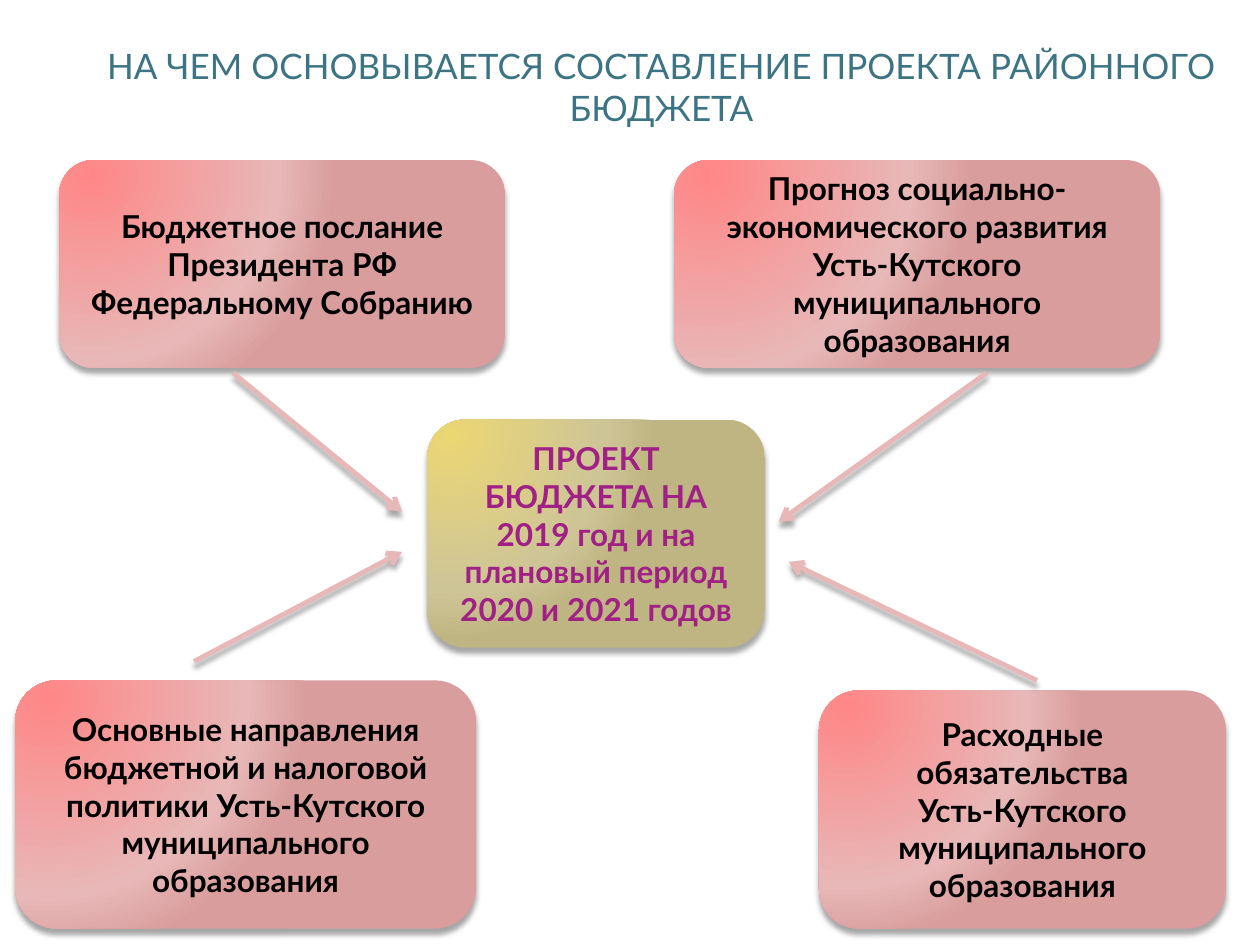
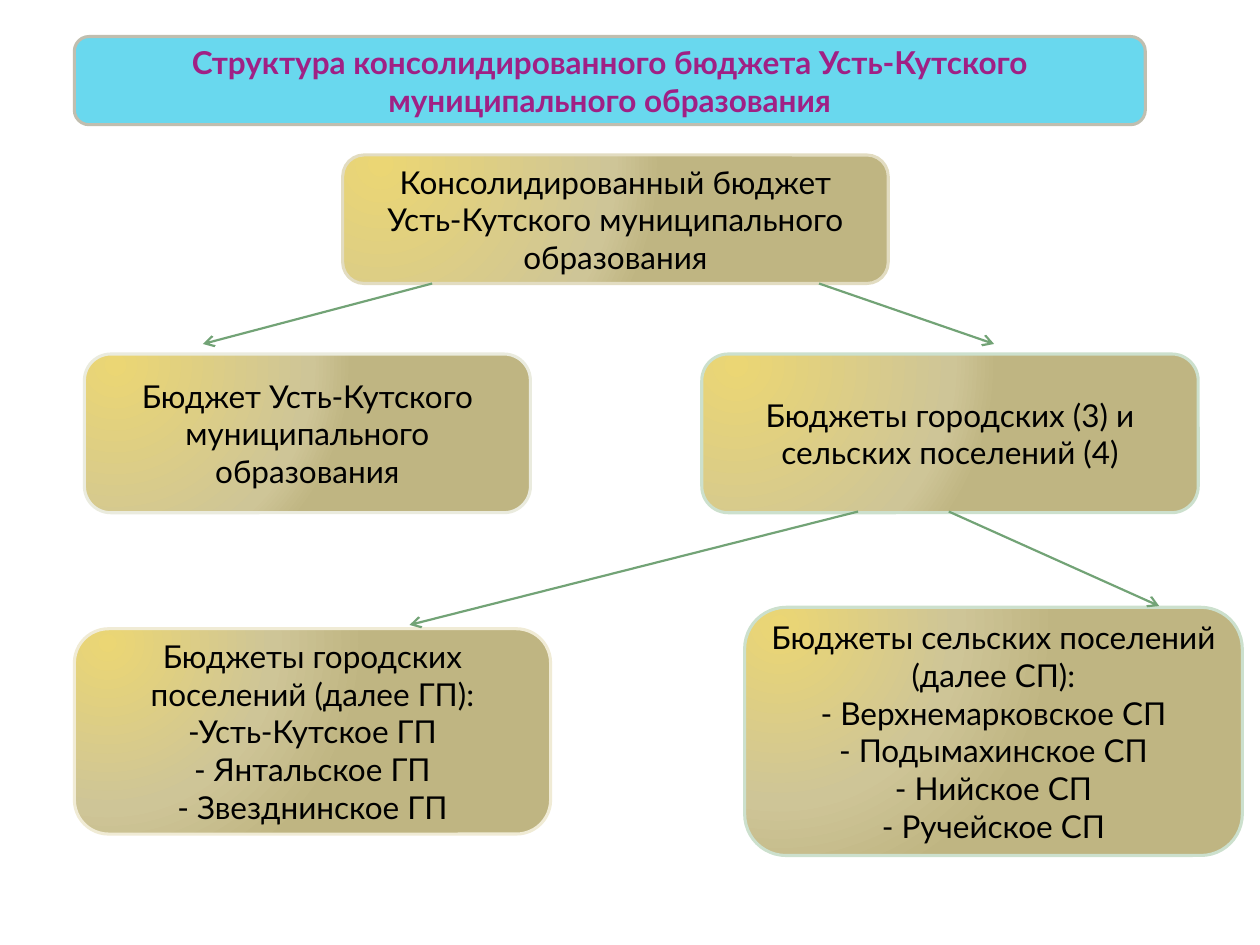
"""Builds two slides on how the district budget is drafted and structured."""
from lxml.etree import SubElement
from pptx import Presentation
from pptx.dml.color import RGBColor as RGB
from pptx.enum.shapes import MSO_CONNECTOR as CONN, MSO_SHAPE as SHAPE
from pptx.enum.text import MSO_ANCHOR as ANCHOR, PP_ALIGN as ALIGN
from pptx.oxml import parse_xml
from pptx.oxml.ns import nsdecls, qn
from pptx.util import Pt

PX = 9144
FONT = "Lato"
COLORS = {
    "title": "3C7483", "accent": "A02085", "text": "000000", "shadow": "000000",
    "banner": "37CBE9", "banner_line": "C0BEAF",
    "pink_arrow": "E8B7B7", "green_arrow": "72A376",
    "sand": "E2DCC1", "grey": "EAEBDE", "mint": "CCE0CD", "cream": "F0EBD5",
}
GRADIENTS = {
    "pink": ("FF8787", "E8B7B7", "D99D9D"),
    "gold": ("EBD674", "CEC597", "BFB582"),
}


def rgb(name):
    return RGB.from_string(COLORS[name])


class Deck:
    """Holds the shared style and the current slide."""

    def __init__(self):
        self.prs = Presentation()
        self.prs.slide_width, self.prs.slide_height = 1000 * PX, 750 * PX
        self.slide = None

    def new_slide(self, layout):
        self.slide = self.prs.slides.add_slide(self.prs.slide_layouts.get_by_name(layout))

    def set_text(self, sp, lines, size, color, bold=False):
        tf = sp.text_frame
        tf.word_wrap = True
        tf.vertical_anchor = ANCHOR.MIDDLE
        tf.text = "\n".join(lines)
        for p in tf.paragraphs:
            p.alignment = ALIGN.CENTER
            p.font.name, p.font.size, p.font.bold = FONT, Pt(size), bold
            p.font.color.rgb = rgb(color)

    def title(self, box, text):
        sp = self.slide.shapes.title
        sp.left, sp.top, sp.width, sp.height = (v * PX for v in box)
        self.set_text(sp, [text], 20, "title")

    def box(self, box, lines, color="text", bold=False, line=None):
        sp = self.slide.shapes.add_shape(SHAPE.ROUNDED_RECTANGLE, *(v * PX for v in box))
        sp.shadow.inherit = False
        if line:
            sp.line.color.rgb = rgb(line)
            sp.line.width = Pt(1.75)
        else:
            sp.line.fill.background()
        self.set_text(sp, lines, 18, color, bold)
        return sp

    def gradient_box(self, box, lines, gradient, middle, shadow=False, **style):
        sp = self.box(box, lines, **style)
        stops = "".join(
            f'<a:gs pos="{pos * 1000}"><a:srgbClr val="{color}"/></a:gs>'
            for pos, color in zip((0, middle, 100), GRADIENTS[gradient]))
        sp.fill.background()
        spPr = sp.element.spPr
        spPr.replace(spPr.find(qn("a:noFill")), parse_xml(
            f'<a:gradFill {nsdecls("a")} rotWithShape="1"><a:gsLst>{stops}</a:gsLst>'
            '<a:path path="circle"><a:fillToRect l="15000" t="15000" r="100000" b="100000"/>'
            '</a:path></a:gradFill>'))
        if shadow:
            self.cast_shadow(spPr.find(qn("a:effectLst")))

    def banner(self, box, text):
        sp = self.box(box, [text], "accent", True, "banner_line")
        sp.fill.solid()
        sp.fill.fore_color.rgb = rgb("banner")
        color = sp.element.spPr.find(qn("a:solidFill")).find(qn("a:srgbClr"))
        SubElement(color, qn("a:alpha"), val="75000")

    def arrow(self, ends, color, width, shadow=False):
        cn = self.slide.shapes.add_connector(CONN.STRAIGHT, *(v * PX for v in ends))
        cn.line.color.rgb = rgb(color)
        cn.line.width = Pt(width)
        spPr = cn.element.spPr
        SubElement(spPr.find(qn("a:ln")), qn("a:tailEnd"), type="arrow")
        effects = SubElement(spPr, qn("a:effectLst"))
        if shadow:
            self.cast_shadow(effects)

    def cast_shadow(self, effects):
        effects.append(parse_xml(
            f'<a:outerShdw {nsdecls("a")} blurRad="38100" dist="38100" dir="5400000" '
            f'rotWithShape="0"><a:srgbClr val="{COLORS["shadow"]}">'
            '<a:alpha val="35000"/></a:srgbClr></a:outerShdw>'))


def draft_basis(deck):
    deck.new_slide("Title Only")
    deck.title((50, 29, 950, 79), "НА ЧЕМ ОСНОВЫВАЕТСЯ СОСТАВЛЕНИЕ ПРОЕКТА РАЙОННОГО БЮДЖЕТА")
    deck.gradient_box(
        (339, 333, 268, 181),
        ["ПРОЕКТ БЮДЖЕТА НА 2019 год и на плановый период 2020 и 2021 годов"],
        "gold", 76, shadow=True, color="accent", bold=True)
    sources = [
        ((535, 127, 386, 165),
         ["Прогноз социально-экономического развития Усть-Кутского муниципального образования"]),
        ((47, 127, 354, 165), ["Бюджетное послание Президента РФ Федеральному Собранию"]),
        ((650, 548, 323, 189),
         ["Расходные обязательства", "Усть-Кутского муниципального образования"]),
        ((12, 540, 366, 197),
         ["Основные направления бюджетной и налоговой политики "
          "Усть-Кутского муниципального образования"]),
    ]
    for box, lines in sources:
        deck.gradient_box(box, lines, "pink", 76, shadow=True, bold=True)
    for ends in [(185, 296, 319, 406), (783, 296, 618, 414),
                 (154, 525, 319, 438), (823, 540, 626, 446)]:
        deck.arrow(ends, "pink_arrow", 2.75, shadow=True)


def budget_structure(deck):
    deck.new_slide("Blank")
    deck.banner((59, 29, 850, 70),
                "Структура консолидированного бюджета Усть-Кутского муниципального образования")
    budgets = [
        ((272, 123, 433, 102), 83, "sand",
         ["Консолидированный бюджет", "Усть-Кутского муниципального образования"]),
        ((67, 281, 354, 126), 83, "grey", ["Бюджет Усть-Кутского муниципального образования"]),
        ((557, 281, 394, 126), 83, "mint", ["Бюджеты городских (3) и сельских поселений (4)"]),
        ((59, 499, 378, 163), 64, "cream",
         ["Бюджеты городских поселений (далее ГП):", "-Усть-Кутское ГП",
          "- Янтальское ГП", "- Звезднинское ГП"]),
        ((591, 482, 395, 197), 64, "mint",
         ["Бюджеты сельских поселений (далее СП):", "- Верхнемарковское СП",
          "- Подымахинское СП", "- Нийское СП", "- Ручейское СП"]),
    ]
    for box, middle, line, lines in budgets:
        deck.gradient_box(box, lines, "gold", middle, line=line)
    for ends in [(343, 225, 161, 273), (650, 225, 789, 273),
                 (681, 406, 325, 496), (753, 406, 920, 481)]:
        deck.arrow(ends, "green_arrow", 1.25)


def main():
    deck = Deck()
    draft_basis(deck)
    budget_structure(deck)
    deck.prs.save("out.pptx")


if __name__ == "__main__":
    main()
